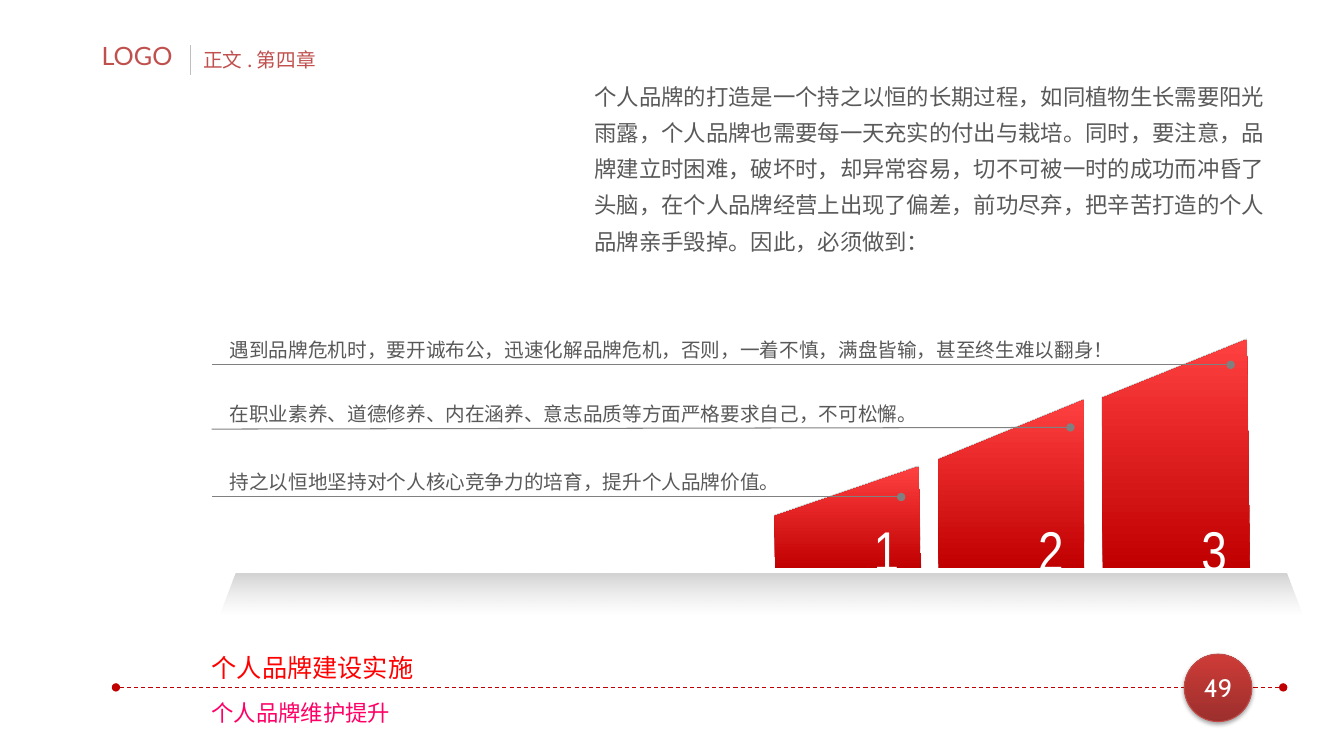
"""Build the slide on maintaining a personal brand, with three rising steps."""
from lxml.etree import SubElement
from pptx import Presentation
from pptx.dml.color import RGBColor
from pptx.enum.dml import MSO_LINE
from pptx.enum.shapes import MSO_CONNECTOR, MSO_SHAPE
from pptx.enum.text import MSO_ANCHOR as Anchor, MSO_AUTO_SIZE as AutoSize, PP_ALIGN as Align
from pptx.oxml.ns import qn
from pptx.util import Pt

WHITE = RGBColor(0xFF, 0xFF, 0xFF)
BLACK = RGBColor(0x00, 0x00, 0x00)
RED = RGBColor(0xFF, 0x00, 0x00)
PINK = RGBColor(0xFF, 0x00, 0x66)
BRICK = RGBColor(0xC0, 0x50, 0x4D)
DEEP_RED = RGBColor(0xC0, 0x00, 0x00)
BRIGHT_RED = RGBColor(0xFF, 0x40, 0x40)
BADGE_DARK = RGBColor(0x9C, 0x2F, 0x2D)
BADGE_LIGHT = RGBColor(0xCE, 0x3B, 0x37)
BADGE_EDGE = RGBColor(0xBF, 0x4C, 0x48)
TEXT_GREY = RGBColor(0x59, 0x59, 0x59)
PIN_GREY = RGBColor(0x80, 0x80, 0x80)
DIVIDER_GREY = RGBColor(0xBF, 0xBF, 0xBF)
EDGE_GREY = RGBColor(0xC0, 0xC0, 0xC0)
PALE_GREY = RGBColor(0xDD, 0xDD, 0xDD)
FLOOR_GREY = RGBColor(0x5F, 0x5F, 0x5F)
CJK = "Noto Sans CJK SC"
NARROW = "Arial Narrow"

prs = Presentation()
prs.slide_width, prs.slide_height = Pt(960), Pt(540)
slide = prs.slides.add_slide(prs.slide_layouts[5])
shapes = slide.shapes


def write(holder, box, text, size, color, font=CJK, spacing=1.0,
          align=Align.LEFT, anchor=Anchor.TOP, inset=7.2):
    holder.left, holder.top, holder.width, holder.height = map(Pt, box)
    frame = holder.text_frame
    frame.word_wrap = True
    frame.auto_size = AutoSize.NONE
    frame.vertical_anchor = anchor
    frame.margin_left = Pt(inset)
    frame.text = text
    paragraph = frame.paragraphs[0]
    paragraph.alignment = align
    paragraph.line_spacing = spacing
    run = paragraph.runs[0]
    run.font.size = Pt(size)
    run.font.name = font
    run.font.color.rgb = color
    SubElement(run.font._element, qn("a:ea"), typeface=CJK)


def draw_line(start, end, color, width, ends=()):
    line = shapes.add_connector(MSO_CONNECTOR.STRAIGHT, *map(Pt, start + end))
    line.line.color.rgb = color
    line.line.width = Pt(width)
    for end_tag in ends:
        SubElement(line.line._get_or_add_ln(), qn(end_tag), type="oval")
    SubElement(line.element.spPr, qn("a:effectLst"))
    return line


write(shapes.title, (151.2, 496, 278, 26.6), "个人品牌维护提升", 16, PINK, inset=0)
write(shapes.add_textbox(0, 0, 0, 0), (151.2, 462.2, 278, 28.8),
      "个人品牌建设实施", 18, RED, inset=0)
draw_line((136, 32.4), (136, 53.3), DIVIDER_GREY, 0.75)
write(shapes.add_textbox(0, 0, 0, 0), (138.2, 31.7, 522.7, 22.3),
      "正文 . 第四章", 14, BRICK, anchor=Anchor.MIDDLE)
write(shapes.add_textbox(0, 0, 0, 0), (65.5, 25.2, 70.6, 28.8), "LOGO", 18, BRICK, "Lato")

footer_rule = draw_line((82.8, 491), (916.6, 491), DEEP_RED, 0.75, ("a:headEnd", "a:tailEnd"))
footer_rule.line.dash_style = MSO_LINE.DASH

page_badge = shapes.add_shape(MSO_SHAPE.OVAL, 0, 0, 0, 0)
write(page_badge, (846, 467.3, 48.2, 48.2), "49", 18, WHITE, "Cabin",
      align=Align.CENTER, anchor=Anchor.MIDDLE, inset=0.7)
page_badge.text_frame.margin_right = Pt(0.7)
page_badge.text_frame.margin_top = page_badge.text_frame.margin_bottom = 0
page_badge.line.color.rgb = BADGE_EDGE
page_badge.line.width = Pt(0.75)
page_badge.shadow.inherit = False
badge_shadow = SubElement(page_badge.element.spPr.find(qn("a:effectLst")), qn("a:outerShdw"),
                          blurRad=str(Pt(3.1)), dist=str(Pt(1.8)), dir="5400000", rotWithShape="0")
shadow_color = SubElement(badge_shadow, qn("a:srgbClr"), val="000000")
SubElement(shadow_color, qn("a:alpha"), val="35000")

write(shapes.add_textbox(0, 0, 0, 0), (417.6, 49, 493.2, 136.8),
      "个人品牌的打造是一个持之以恒的长期过程，如同植物生长需要阳光雨露，个人品牌也需要每一天充实的付出与栽培。"
      "同时，要注意，品牌建立时困难，破坏时，却异常容易，切不可被一时的成功而冲昏了头脑，"
      "在个人品牌经营上出现了偏差，前功尽弃，把辛苦打造的个人品牌亲手毁掉。因此，必须做到：",
      16, TEXT_GREY, spacing=1.35)

STEP_BASE = 406.8
step_outlines = [
    [(553.2, 368.6), (656, 333.4), (658, STEP_BASE), (553.7, STEP_BASE)],
    [(670.3, 328.3), (774, 285.8), (774.7, STEP_BASE), (670.3, STEP_BASE)],
    [(787, 284.4), (890.6, 242.6), (892.8, STEP_BASE), (787.7, STEP_BASE)],
]
floor_outline = [(168.5, 409.7), (918.7, 409.7), (930.2, 439.2), (157, 439.2)]
graded_outlines = []
for outline in step_outlines:
    back_edge = [(x, y - 0.7) for x, y in outline]
    graded_outlines.append((back_edge, WHITE, PALE_GREY, EDGE_GREY))
    graded_outlines.append((outline, DEEP_RED, BRIGHT_RED, None))
graded_outlines.append((floor_outline, FLOOR_GREY, BLACK, None))

graded = [(page_badge, BADGE_DARK, BADGE_LIGHT)]
for outline, bottom_color, top_color, edge in graded_outlines:
    points = [(Pt(x), Pt(y)) for x, y in outline]
    builder = shapes.build_freeform(*points[0])
    builder.add_line_segments(points[1:], close=True)
    facet = builder.convert_to_shape()
    facet.shadow.inherit = False
    if edge:
        facet.line.color.rgb = edge
        facet.line.width = Pt(0.25)
    else:
        facet.line.fill.background()
    graded.append((facet, bottom_color, top_color))

for facet, bottom_color, top_color in graded:
    facet.fill.gradient()
    facet.fill.gradient_angle = 90
    for stop, color in zip(facet.fill.gradient_stops, (bottom_color, top_color)):
        stop.color.rgb = color

floor = graded[-1][0]
floor_colors = floor.element.spPr.find(qn("a:gradFill")).iter(qn("a:srgbClr"))
for floor_color, alpha in zip(floor_colors, ("0", "18000")):
    SubElement(floor_color, qn("a:alpha"), val=alpha)

for number, left in enumerate((617, 734.4, 851), start=1):
    write(shapes.add_textbox(0, 0, 0, 0), (left, 365, 39.6, 55.4), str(number), 40, WHITE, NARROW)

principles = [
    ("持之以恒地坚持对个人核心竞争力的培育，提升个人品牌价值。", 643.7, 355, 355, 436.3),
    ("在职业素养、道德修养、内在涵养、意志品质等方面严格要求自己，不可松懈。", 764.6, 305.3, 306.5, 607.7),
    ("遇到品牌危机时，要开诚布公，迅速化解品牌危机，否则，一着不慎，满盘皆输，甚至终生难以翻身！",
     879.1, 260.6, 260.6, 694),
]
for principle, pin_x, pin_y, rule_y, width in principles:
    draw_line((pin_x, pin_y), (151.2, rule_y), PIN_GREY, 0.75, ("a:headEnd",))
    write(shapes.add_textbox(0, 0, 0, 0), (157, rule_y - 26, width, 27.4),
          principle, 14, TEXT_GREY, NARROW, spacing=1.2)

draw_line((168.5, STEP_BASE), (919.4, STEP_BASE), WHITE, 2.25)

prs.save("out.pptx")
